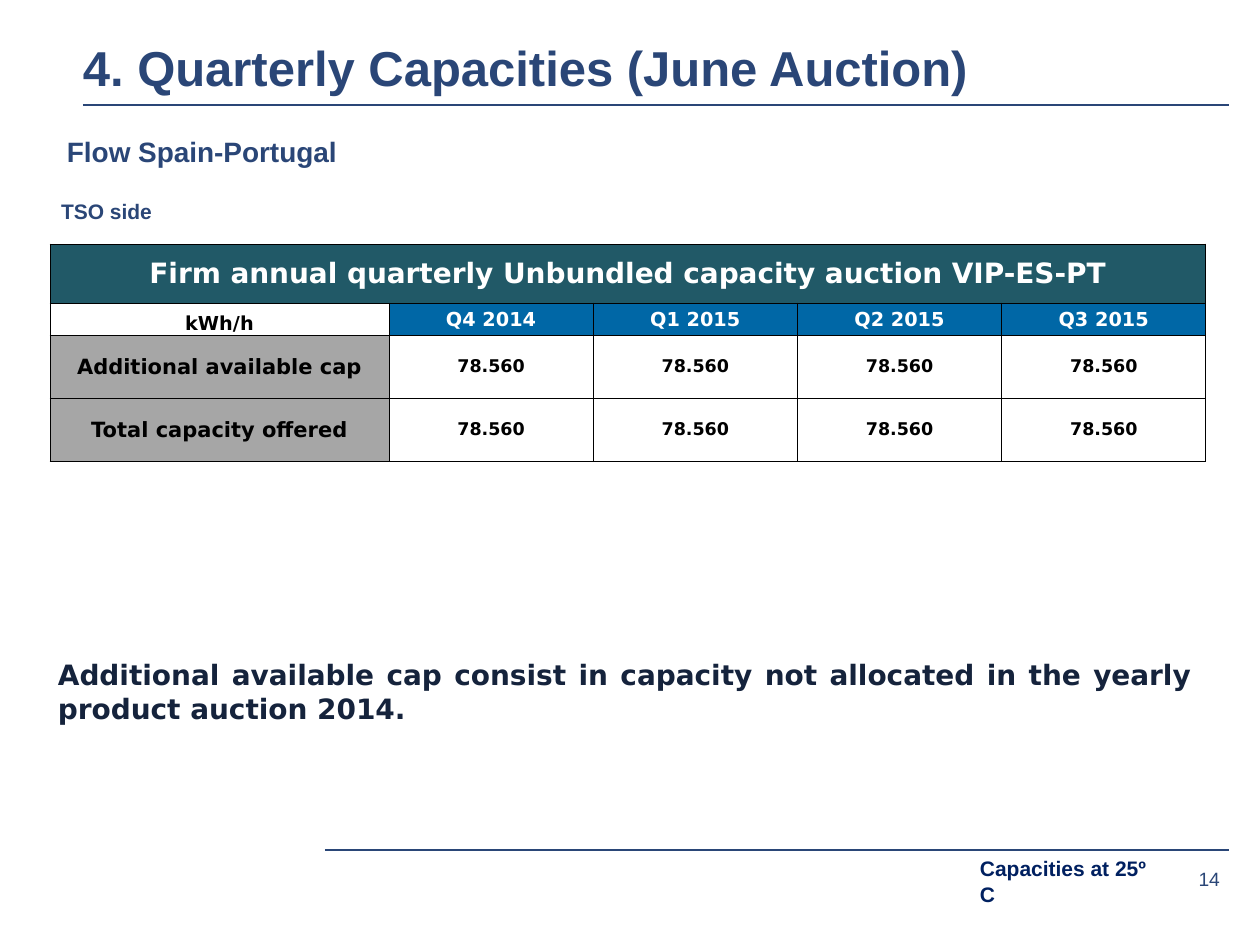
from dataclasses import dataclass

from lxml.etree import SubElement
from pptx import Presentation
from pptx.dml.color import RGBColor
from pptx.enum.shapes import MSO_CONNECTOR
from pptx.enum.text import MSO_ANCHOR as ANCHOR, PP_ALIGN as ALIGN
from pptx.oxml import parse_xml
from pptx.oxml.ns import nsdecls, qn
from pptx.util import Emu, Pt

PX = 914400 / 126


@dataclass(frozen=True)
class Theme:
    navy: str = "2A4677"
    deep: str = "002060"
    ink: str = "15233C"
    teal: str = "215967"
    blue: str = "0067A6"
    grey: str = "A6A6A6"
    white: str = "FFFFFF"
    black: str = "000000"
    sans: str = "Arial"
    wide: str = "DejaVu Sans"
    title: int = 28
    lead: int = 16
    label: int = 12
    head: int = 11
    value: int = 10
    rule: float = 1.5
    border: float = 0.5


T = Theme()

# Content: text, box in px (left, top, width, height), format
TEXTS = [
    ("14", (1126, 859, 100, 39),
     dict(size=T.head, bold=False, align=ALIGN.RIGHT, anchor=ANCHOR.MIDDLE, ins=(0, 0, 6, 0))),
    ("Flow Spain-Portugal", (54, 129, 655, 47), dict(size=T.lead, after=6)),
    ("4. Quarterly Capacities (June Auction)", (83, 46, 1148, 50),
     dict(size=T.title, anchor=ANCHOR.BOTTOM, ins=(0, 0, 0, 0))),
    ("Capacities at 25º C", (967, 850, 205, 38), dict(size=T.label, color=T.deep)),
    ("Additional available cap consist in capacity not allocated in the yearly "
     "product auction 2014.", (45, 652, 1160, 81),
     dict(size=T.lead, color=T.ink, font=T.wide, align=ALIGN.JUSTIFY)),
    ("TSO side", (48, 193, 558, 38), dict(size=T.label, after=6)),
]
RULES = [(83, 105), (325, 850)]  # left, y
RULE_END = 1229

TABLE_TITLE = "Firm annual quarterly Unbundled capacity auction VIP-ES-PT"
UNIT = "kWh/h"
QUARTERS = ["Q4 2014", "Q1 2015", "Q2 2015", "Q3 2015"]
CAPACITIES = [
    ("Additional available cap", ["78.560"] * 4),
    ("Total capacity offered", ["78.560"] * 4),
]
TABLE_AT = (50, 244)
TABLE_WIDTH, LABEL_WIDTH = 1156, 339
QUARTER_WIDTH = (TABLE_WIDTH - LABEL_WIDTH) / len(QUARTERS)
COLS = [LABEL_WIDTH] + [QUARTER_WIDTH] * len(QUARTERS)
ROWS = [59, 32] + [63] * len(CAPACITIES)


def px(n):
    return Emu(round(n * PX))


def write(tf, text, *, size, color=T.navy, font=T.sans, bold=True, align=ALIGN.LEFT, after=0):
    p = tf.paragraphs[0]
    p.alignment = align
    p.space_after = Pt(after)
    r = p.add_run()
    r.text = text
    r.font.name, r.font.size, r.font.bold = font, Pt(size), bold
    r.font.color.rgb = RGBColor.from_string(color)


def add_text(s, text, box, *, anchor=ANCHOR.TOP, ins=(13, 6, 13, 6), **fmt):
    tf = s.shapes.add_textbox(*map(px, box)).text_frame
    tf.word_wrap = True
    tf.vertical_anchor = anchor
    tf.margin_left, tf.margin_top, tf.margin_right, tf.margin_bottom = map(px, ins)
    write(tf, text, **fmt)


def add_rule(s, left, y):
    line = s.shapes.add_connector(MSO_CONNECTOR.STRAIGHT, px(left), px(y), px(RULE_END), px(y))
    line.line.color.rgb = RGBColor.from_string(T.navy)
    line.line.width = Pt(T.rule)
    SubElement(line._element.spPr, qn("a:effectLst"))


def set_borders(cell):
    tc_pr = cell._tc.get_or_add_tcPr()
    for i, side in enumerate("LRTB"):
        tc_pr.insert(i, parse_xml(
            f'<a:ln{side} {nsdecls("a")} w="{Pt(T.border)}"><a:solidFill>'
            f'<a:srgbClr val="{T.black}"/></a:solidFill></a:ln{side}>'))


def fill_cell(cell, text, *, fill=None, color=T.black, size, anchor=ANCHOR.MIDDLE):
    cell.margin_left = cell.margin_top = cell.margin_right = px(1)
    cell.margin_bottom = 0
    cell.vertical_anchor = anchor
    if fill:
        cell.fill.solid()
        cell.fill.fore_color.rgb = RGBColor.from_string(fill)
    else:
        cell.fill.background()
    write(cell.text_frame, text, size=size, color=color, font=T.wide, align=ALIGN.CENTER)


def add_capacity_table(s):
    size = TABLE_WIDTH, sum(ROWS)
    table = s.shapes.add_table(len(ROWS), len(COLS), *map(px, TABLE_AT + size)).table
    table.first_row = table.horz_banding = False
    for col, width in zip(table.columns, COLS):
        col.width = px(width)
    for row, height in zip(table.rows, ROWS):
        row.height = px(height)

    # Header rows
    table.cell(0, 0).merge(table.cell(0, len(COLS) - 1))
    fill_cell(table.cell(0, 0), TABLE_TITLE, fill=T.teal, color=T.white, size=T.lead)
    fill_cell(table.cell(1, 0), UNIT, size=T.head, anchor=ANCHOR.BOTTOM)
    for c, quarter in enumerate(QUARTERS, 1):
        fill_cell(table.cell(1, c), quarter, fill=T.blue, color=T.white, size=T.head)

    # Capacity rows
    for r, (label, values) in enumerate(CAPACITIES, 2):
        fill_cell(table.cell(r, 0), label, fill=T.grey, size=T.label)
        for c, value in enumerate(values, 1):
            fill_cell(table.cell(r, c), value, fill=T.white, size=T.value)

    for cell in table.iter_cells():
        set_borders(cell)


def main():
    prs = Presentation()
    prs.slide_width, prs.slide_height = px(1260), px(945)
    s = prs.slides.add_slide(prs.slide_layouts[6])
    for left, y in RULES:
        add_rule(s, left, y)
    add_capacity_table(s)
    for text, box, fmt in TEXTS:
        add_text(s, text, box, **fmt)
    prs.save("out.pptx")


if __name__ == "__main__":
    main()
